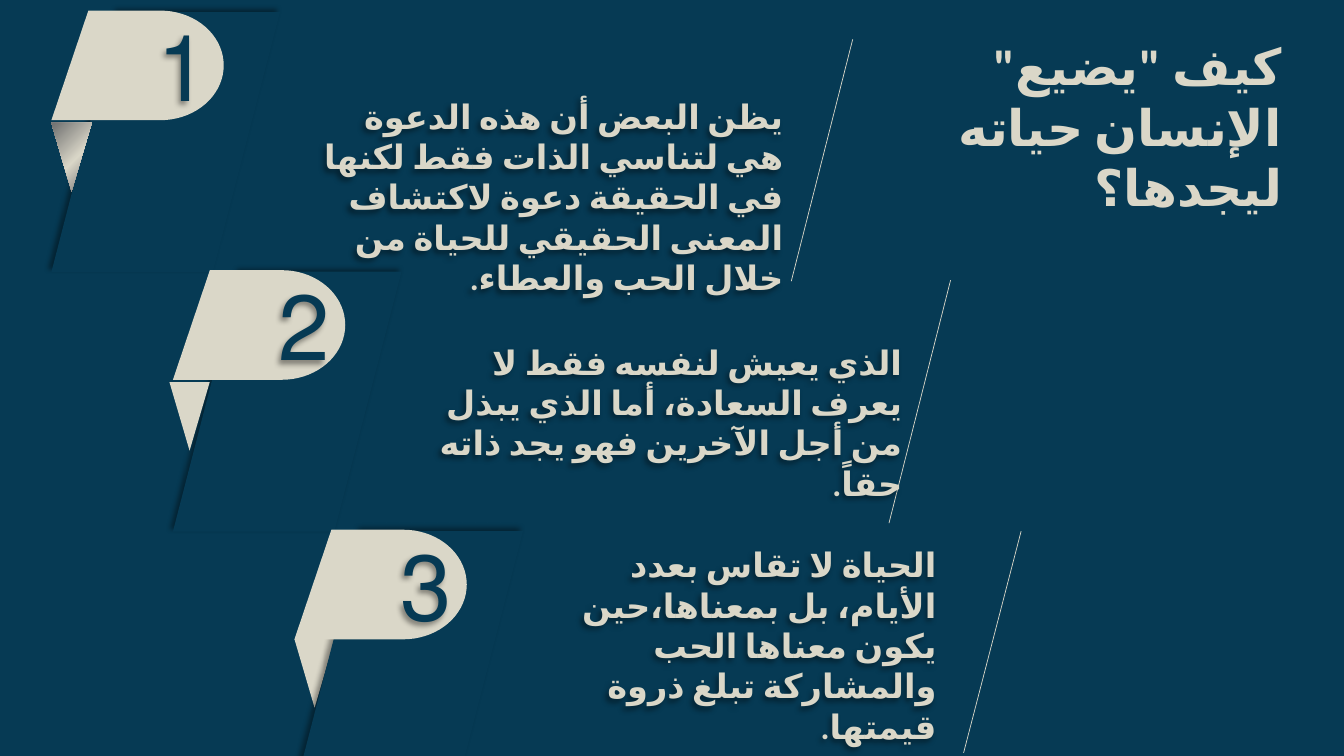
"""Build a slide with three numbered ribbons and their Arabic statements."""
import copy
import math
from dataclasses import dataclass

from lxml import etree
from pptx import Presentation
from pptx.dml.color import RGBColor
from pptx.enum import shapes, text
from pptx.oxml.ns import qn
from pptx.util import Pt


@dataclass(frozen=True)
class Theme:
    navy: str = "063A54"
    sand: str = "DAD7C8"
    shade: str = "000000"
    body_font: str = "Calibri"
    digit_font: str = "Arial"
    title_size: int = 36
    body_size: int = 24
    digit_size: int = 66
    rule: float = 0.5


T = Theme()
TITLE = ('كيف "يضيع" الإنسان حياته ليجدها؟', (635, 21.6, 288, 94.3))
FOLD_STOPS = [(0.06, "7C7C7C"), (0.45, T.sand), (0.97, "747474")]
ITEMS = [
    dict(digit="1", font=T.digit_font, fold=(0, 79.2), stops=FOLD_STOPS, tucked=False,
         rule=(609.1, 28.1, 565.2, 200.9), box=(207.4, 64.8, 359.3, 94.3),
         body="يظن البعض أن هذه الدعوة هي لتناسي الذات فقط لكنها في الحقيقة "
              "دعوة لاكتشاف المعنى الحقيقي للحياة من خلال الحب والعطاء."),
    dict(digit="2", font=T.body_font, fold=(-2.5, 78.9), stops=None, tucked=False,
         rule=(679, 200.2, 635, 373.7), box=(274.3, 240.5, 377.3, 65.5),
         body="الذي يعيش لنفسه فقط لا يعرف السعادة، أما الذي يبذل من أجل "
              "الآخرين فهو يجد ذاته حقاً."),
    dict(digit="3", font=T.body_font, fold=(0, 77.1), stops=None, tucked=True,
         rule=(729.4, 379.4, 688.3, 537.8), box=(385.2, 385.2, 290.9, 94.3),
         body="الحياة لا تقاس بعدد الأيام، بل بمعناها،حين يكون معناها الحب "
              "والمشاركة تبلغ ذروة قيمتها."),
]
FIRST, STEP = (36.7, 8.6), (86.8, 185.4)
PANEL = (163.4, 185.8)
TAB_W, TAB_H, SLANT, STRAIGHT = 123.1, 78.3, 26.4, 77.8
FOLD = (28.8, 49)
DIGIT = (74, -5.7, 45.4, 87.1)


def rgb(value):
    return RGBColor.from_string(value)


def add_shadow(sp, angle):
    sp.shadow.inherit = False
    effects = sp._element.spPr.find(qn("a:effectLst"))
    outer = etree.SubElement(effects, qn("a:outerShdw"), blurRad=str(Pt(4)),
                             dist=str(Pt(3)), dir=str(angle * 60000),
                             algn="ctr", rotWithShape="0")
    color = etree.SubElement(outer, qn("a:srgbClr"), val=T.shade)
    etree.SubElement(color, qn("a:alpha"), val="40000")


def paint(sp, color):
    sp.fill.solid()
    sp.fill.fore_color.rgb = rgb(color)
    sp.line.fill.background()
    sp.shadow.inherit = False
    return sp


def write(sp, content, *, size, color, font, script_font=None, bold=False):
    tf = sp.text_frame
    tf.word_wrap = True
    tf.auto_size = text.MSO_AUTO_SIZE.NONE
    tf.vertical_anchor = text.MSO_ANCHOR.TOP
    p = tf.paragraphs[0]
    p.alignment = text.PP_ALIGN.RIGHT
    p._p.get_or_add_pPr().set("rtl", "1")
    r = p.add_run()
    r.text = content
    r.font.size, r.font.bold, r.font.name = Pt(size), bold, font
    r.font.color.rgb = rgb(color)
    r._r.rPr.set("lang", "ar-SA")
    if script_font:
        etree.SubElement(r._r.rPr, qn("a:cs"), typeface=script_font)


def add_preset(slide, kind, x, y, w, h, color):
    return paint(slide.shapes.add_shape(kind, Pt(x), Pt(y), Pt(w), Pt(h)), color)


def add_fold(slide, x, y, stops):
    sp = add_preset(slide, shapes.MSO_SHAPE.ISOSCELES_TRIANGLE, x, y, *FOLD, T.sand)
    sp.rotation = 180
    if stops:
        sp.fill.gradient()
        sp.fill.gradient_angle = 315
        stop_list = sp._element.spPr.find(".//" + qn("a:gsLst"))
        stop_list.append(copy.deepcopy(stop_list[0]))
        for stop, (position, color) in zip(sp.fill.gradient_stops, stops):
            stop.position = position
            stop.color.rgb = rgb(color)


def add_panel(slide, x, y):
    sp = add_preset(slide, shapes.MSO_SHAPE.PARALLELOGRAM, x, y, *PANEL, T.navy)
    sp.adjustments[0] = 0.294
    add_shadow(sp, 225)


def add_tab(slide, x, y):
    angles = [math.radians(a) for a in range(-90, 91, 5)]
    arc = [(x + STRAIGHT + (TAB_W - STRAIGHT) * math.cos(a),
            y + TAB_H / 2 * (1 + math.sin(a))) for a in angles]
    outline = [(Pt(px), Pt(py)) for px, py in arc + [(x, y + TAB_H)]]
    builder = slide.shapes.build_freeform(Pt(x + SLANT), Pt(y))
    builder.add_line_segments(outline, close=True)
    paint(builder.convert_to_shape(), T.sand)


def add_rule(slide, ends):
    sp = slide.shapes.add_connector(shapes.MSO_CONNECTOR.STRAIGHT, *map(Pt, ends))
    sp.line.color.rgb = rgb(T.sand)
    sp.line.width = Pt(T.rule)
    etree.SubElement(sp._element.spPr, qn("a:effectLst"))


def add_text(slide, box, content, **style):
    sp = slide.shapes.add_textbox(*map(Pt, box))
    write(sp, content, **style)
    add_shadow(sp, 135)


def add_item(slide, index, item):
    x, y = (start + step * index for start, step in zip(FIRST, STEP))
    fold = (x + item["fold"][0], y + item["fold"][1], item["stops"])
    if item["tucked"]:
        add_fold(slide, *fold)
    add_panel(slide, x, y)
    add_tab(slide, x, y - 1)
    if not item["tucked"]:
        add_fold(slide, *fold)
    dx, dy, w, h = DIGIT
    add_text(slide, (x + dx, y + dy, w, h), item["digit"], size=T.digit_size,
             color=T.navy, font=item["font"])
    add_rule(slide, item["rule"])
    add_text(slide, item["box"], item["body"], size=T.body_size, color=T.sand,
             font=T.body_font, script_font=T.body_font, bold=True)


def main():
    prs = Presentation()
    prs.slide_width, prs.slide_height = Pt(960), Pt(540)
    slide = prs.slides.add_slide(prs.slide_layouts[5])
    slide.background.fill.solid()
    slide.background.fill.fore_color.rgb = rgb(T.navy)
    content, box = TITLE
    title = slide.shapes.title
    title.left, title.top, title.width, title.height = map(Pt, box)
    write(title, content, size=T.title_size, color=T.sand, font=T.body_font,
          script_font=T.body_font, bold=True)
    for index, item in enumerate(ITEMS):
        add_item(slide, index, item)
    prs.save("out.pptx")


if __name__ == "__main__":
    main()
